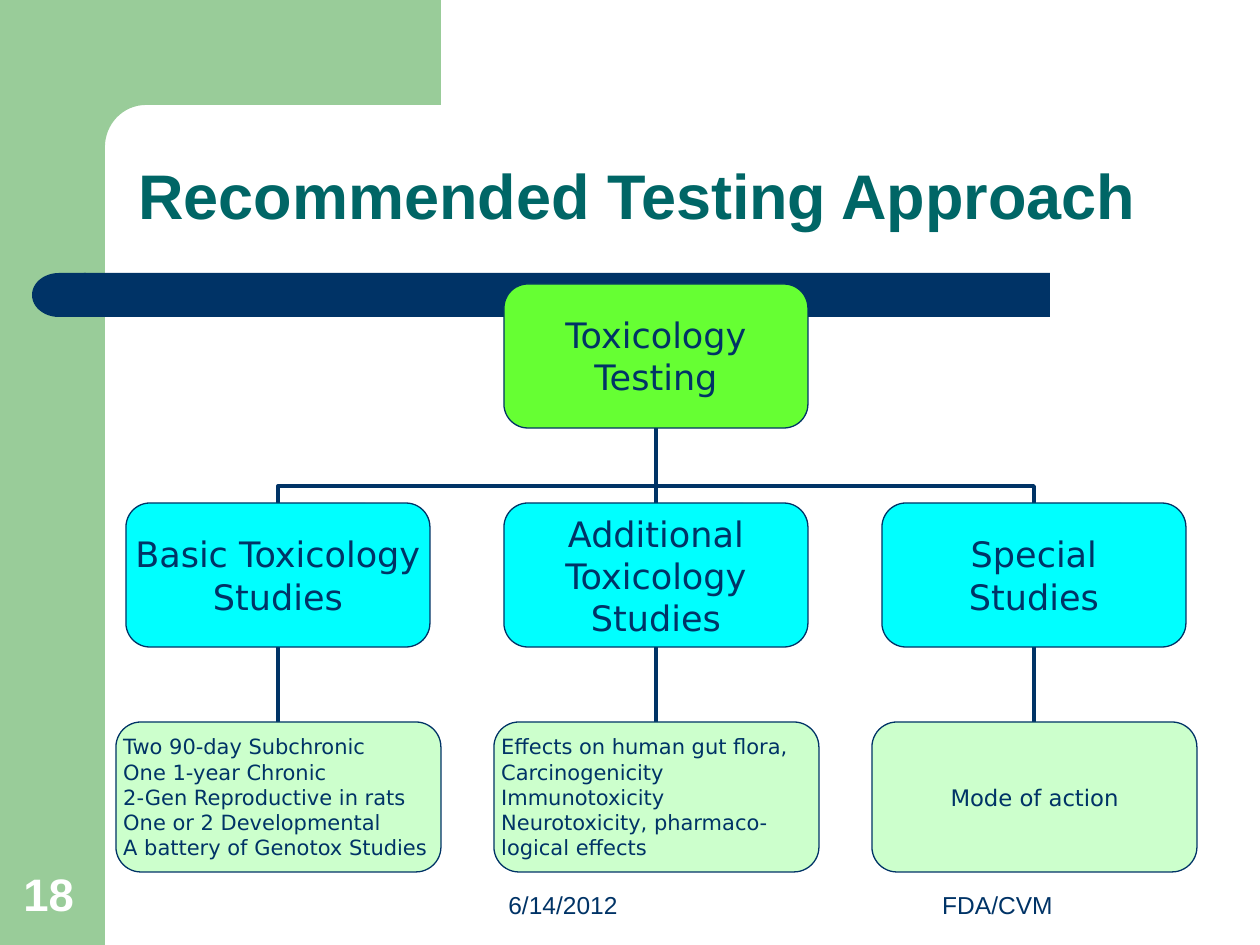
"""Build the toxicology testing hierarchy slide."""
from dataclasses import dataclass
from math import cos, pi, sin

from lxml import etree
from pptx import Presentation
from pptx.dml.color import RGBColor
from pptx.enum.shapes import MSO_CONNECTOR, MSO_SHAPE
from pptx.enum.text import MSO_ANCHOR, PP_ALIGN
from pptx.oxml.ns import qn
from pptx.util import Emu, Pt

RECTANGLE = MSO_SHAPE.RECTANGLE
ROUNDED = MSO_SHAPE.ROUNDED_RECTANGLE
DELAY = MSO_SHAPE.FLOWCHART_DELAY
STRAIGHT = MSO_CONNECTOR.STRAIGHT
ELBOW = MSO_CONNECTOR.ELBOW
MIDDLE = MSO_ANCHOR.MIDDLE
BOTTOM = MSO_ANCHOR.BOTTOM
LEFT = PP_ALIGN.LEFT
CENTER = PP_ALIGN.CENTER
RIGHT = PP_ALIGN.RIGHT

PX = 914400 / 126
COLORS = {
    "sage": "99CC99",
    "navy": "003366",
    "teal": "006666",
    "lime": "66FF33",
    "cyan": "00FFFF",
    "mint": "CCFFCC",
    "white": "FFFFFF",
}
COLUMNS = [278 + 378 * column for column in range(3)]
ROOT_TOP, STUDY_TOP, DETAIL_TOP = (284 + 219 * row for row in range(3))
BOX_WIDTH, BOX_HEIGHT = 304, 144
DETAIL_WIDTH, DETAIL_HEIGHT = 325, 150


@dataclass(frozen=True)
class Box:
    """A filled box of the hierarchy, centred on its column."""
    center: int
    top: int
    width: int
    height: int
    fill: str
    text: str
    size: int
    align: PP_ALIGN = CENTER


@dataclass(frozen=True)
class Label:
    """A free-standing line of text."""
    left: int
    top: int
    width: int
    height: int
    text: str
    size: int
    color: str
    align: PP_ALIGN = LEFT
    bold: bool = False
    spacing: float = 1.0


BOXES = [
    Box(COLUMNS[1], ROOT_TOP, BOX_WIDTH, BOX_HEIGHT, "lime", "Toxicology\nTesting", 20),
    *(
        Box(center, STUDY_TOP, BOX_WIDTH, BOX_HEIGHT, "cyan", text, 20)
        for center, text in zip(COLUMNS, (
            "Basic Toxicology\nStudies",
            "Additional\nToxicology\nStudies",
            "Special\nStudies",
        ))
    ),
    *(
        Box(center, DETAIL_TOP, DETAIL_WIDTH, DETAIL_HEIGHT, "mint", text, size, align)
        for center, (text, size, align) in zip(COLUMNS, (
            ("Two 90-day Subchronic\nOne 1-year Chronic\n2-Gen Reproductive in rats\n"
             "One or 2 Developmental\nA battery of Genotox Studies", 12, LEFT),
            ("Effects on human gut flora,\nCarcinogenicity\nImmunotoxicity\n"
             "Neurotoxicity, pharmaco-\nlogical effects", 12, LEFT),
            ("Mode of action", 13, CENTER),
        ))
    ),
]
LABELS = [
    Label(336, 861, 294, 65, "6/14/2012", 14, "navy", RIGHT),
    Label(798, 861, 399, 65, "FDA/CVM", 14, "navy", CENTER),
    Label(11, 861, 81, 66, "18", 26, "white", bold=True),
    Label(126, 126, 1090, 113, "Recommended Testing Approach", 36, "teal",
          bold=True, spacing=0.9),
]


def px(length: float) -> Emu:
    return Emu(round(length * PX))


def rgb(name: str) -> RGBColor:
    return RGBColor.from_string(COLORS[name])


def paint(shape, fill: str) -> None:
    shape.shadow.inherit = False
    shape.fill.solid()
    shape.fill.fore_color.rgb = rgb(fill)
    shape.line.fill.background()


def add_block(shapes, kind: MSO_SHAPE, left: int, top: int, width: int, height: int, fill: str):
    block = shapes.add_shape(kind, px(left), px(top), px(width), px(height))
    paint(block, fill)
    return block


def write(frame, text: str, size: int, font: str, color: str, align: PP_ALIGN,
          bold: bool = False, spacing: float = 1.0) -> None:
    frame.word_wrap = True
    frame.text = text
    for paragraph in frame.paragraphs:
        paragraph.alignment = align
        paragraph.line_spacing = spacing
        for run in paragraph.runs:
            run.font.size = Pt(size)
            run.font.name = font
            run.font.bold = bold
            run.font.color.rgb = rgb(color)


def add_backdrop(shapes) -> None:
    add_block(shapes, RECTANGLE, 0, 0, 105, 945, "sage")
    turns = [pi / 2 * step / 16 for step in range(17)]
    curve = [(px(146 - 41 * sin(turn)), px(147 - 42 * cos(turn))) for turn in turns]
    corner = shapes.build_freeform(px(63), px(0), scale=1.0)
    corner.add_line_segments(
        [(px(441), px(0)), (px(441), px(105)), *curve, (px(105), px(161)), (px(63), px(161))]
    )
    paint(corner.convert_to_shape(), "sage")
    bar = add_block(shapes, ROUNDED, 84, 273, 966, 44, "navy")
    bar.adjustments[0] = 0
    cap = add_block(shapes, DELAY, 32, 273, 54, 44, "navy")
    cap.element.spPr.xfrm.set("flipH", "1")


def add_link(shapes, kind: MSO_CONNECTOR, start: tuple, end: tuple):
    link = shapes.add_connector(kind, *map(px, (*start, *end)))
    link.line.color.rgb = rgb("navy")
    link.line.width = Pt(2.25)
    etree.SubElement(link.element.spPr, qn("a:effectLst"))
    return link


def add_branch(shapes, child: int, parent: int, child_top: int, parent_bottom: int) -> None:
    """Draw an elbow that leaves the child upwards, by turning a level one."""
    side = 1 if child > parent else -1
    middle_x, middle_y = (child + parent) / 2, (child_top + parent_bottom) / 2
    rise, run = (child_top - parent_bottom) / 2, abs(child - parent) / 2
    branch = add_link(
        shapes, ELBOW,
        (middle_x + side * rise, middle_y - run), (middle_x - side * rise, middle_y + run),
    )
    properties = branch.element.spPr
    properties.xfrm.set("rot", str((90 if side > 0 else 270) * 60000))
    guides = properties.find(qn("a:prstGeom")).get_or_add_avLst()
    etree.SubElement(guides, qn("a:gd"), name="adj1", fmla="val 22600")


def add_links(shapes) -> None:
    root_bottom, study_bottom = ROOT_TOP + BOX_HEIGHT, STUDY_TOP + BOX_HEIGHT
    for center in COLUMNS:
        add_link(shapes, STRAIGHT, (center, DETAIL_TOP), (center, study_bottom))
    add_link(shapes, STRAIGHT, (COLUMNS[1], STUDY_TOP), (COLUMNS[1], root_bottom))
    for center in (COLUMNS[0], COLUMNS[2]):
        add_branch(shapes, center, COLUMNS[1], STUDY_TOP, root_bottom)


def add_box(shapes, box: Box) -> None:
    node = add_block(shapes, ROUNDED, box.center - box.width // 2, box.top,
                     box.width, box.height, box.fill)
    node.line.color.rgb = rgb("navy")
    node.line.width = Pt(0.75)
    frame = node.text_frame
    frame.margin_left = frame.margin_right = frame.margin_top = frame.margin_bottom = 0
    frame.vertical_anchor = MIDDLE
    write(frame, box.text, box.size, "DejaVu Sans", "navy", box.align)


def add_label(shapes, label: Label) -> None:
    frame = shapes.add_textbox(
        px(label.left), px(label.top), px(label.width), px(label.height)
    ).text_frame
    frame.vertical_anchor = BOTTOM
    write(frame, label.text, label.size, "Arial", label.color, label.align,
          label.bold, label.spacing)


def main() -> None:
    deck = Presentation()
    deck.slide_width, deck.slide_height = px(1260), px(945)
    shapes = deck.slides.add_slide(deck.slide_layouts[6]).shapes
    add_backdrop(shapes)
    add_links(shapes)
    for box in BOXES:
        add_box(shapes, box)
    for label in LABELS:
        add_label(shapes, label)
    deck.save("out.pptx")


if __name__ == "__main__":
    main()
